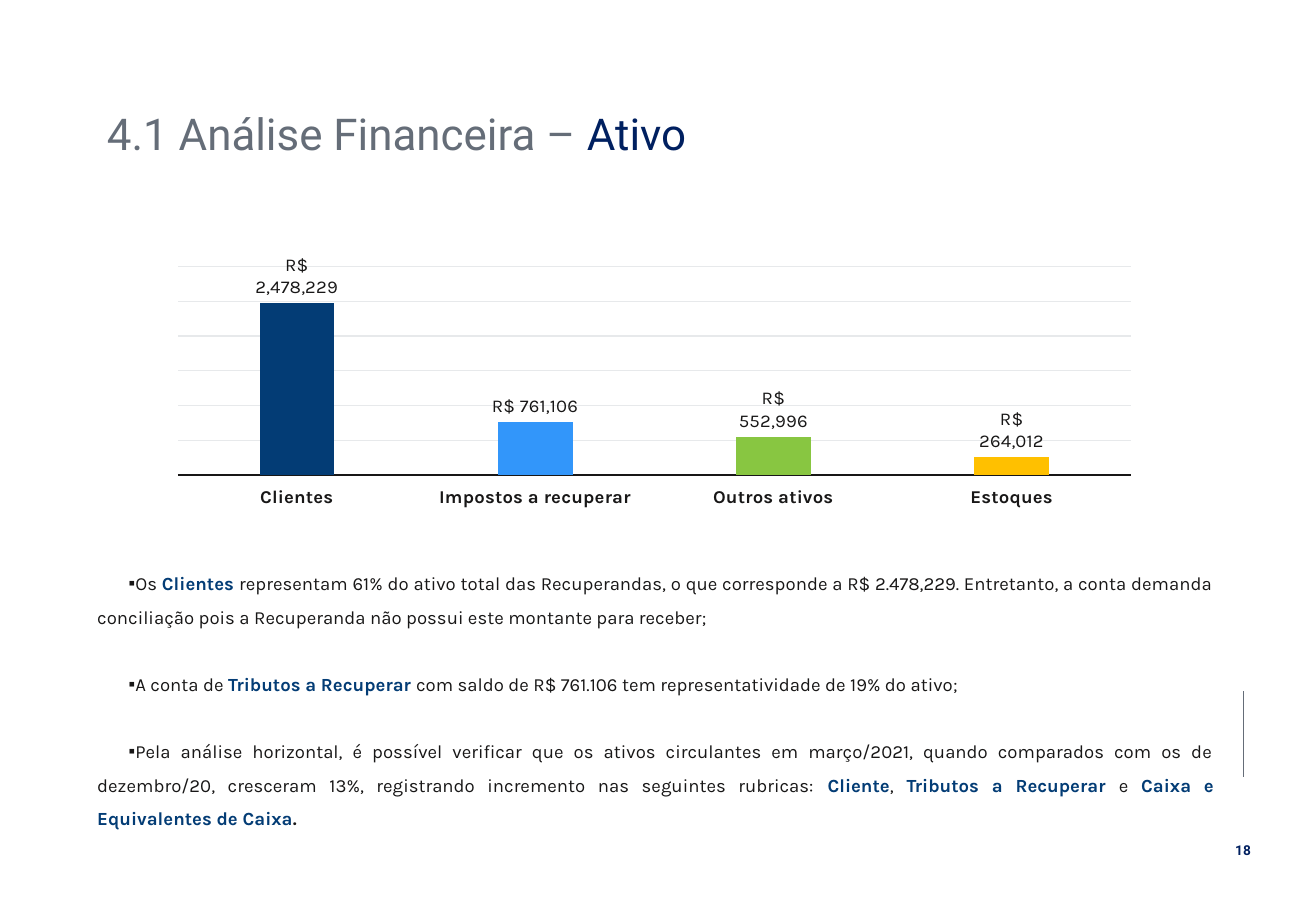
from dataclasses import dataclass

from lxml import etree
from pptx import Presentation
from pptx.chart.data import CategoryChartData
from pptx.dml.color import RGBColor
from pptx.enum.chart import XL_CHART_TYPE as ChartType
from pptx.enum.chart import XL_LABEL_POSITION as LabelPosition
from pptx.enum.chart import XL_TICK_LABEL_POSITION as TickLabels
from pptx.enum.chart import XL_TICK_MARK as TickMark
from pptx.enum.shapes import MSO_CONNECTOR as Connector
from pptx.enum.text import MSO_ANCHOR as Anchor
from pptx.enum.text import MSO_AUTO_SIZE as AutoSize
from pptx.enum.text import PP_ALIGN as Align
from pptx.oxml.ns import qn
from pptx.util import Inches, Pt


@dataclass(frozen=True)
class Theme:
    heading_font: str = "Roboto"
    body_font: str = "Karla"
    gray: str = "656D78"
    navy: str = "002060"
    ink: str = "181717"
    accent: str = "033C75"
    grid: str = "E7E9EB"
    title_size: float = 26
    body_size: float = 11
    page_size: float = 8.1


THEME = Theme()
CURRENCY = '"R$"\\ #,##0'

# category, value, bar colour
ASSETS = [
    ("Clientes", 2478229, "033C75"),
    ("Impostos a recuperar", 761106, "3296FA"),
    ("Outros ativos", 552996, "88C641"),
    ("Estoques", 264012, "FFC000"),
]

# Each finding is a list of (text, is_highlighted) pieces
FINDINGS = [
    [
        ("Os ", False),
        ("Clientes ", True),
        ("representam 61% do ativo total das Recuperandas, o que corresponde a "
         "R$ 2.478,229. Entretanto, a conta demanda conciliação pois a Recuperanda "
         "não possui este montante para receber;", False),
    ],
    [
        ("A conta de ", False),
        ("Tributos a Recuperar ", True),
        ("com saldo de R$ 761.106 tem representatividade de 19% do ativo;", False),
    ],
    [
        ("Pela análise horizontal, é possível verificar que os ativos circulantes em "
         "março/2021, quando comparados com os de dezembro/20, cresceram 13%, "
         "registrando incremento nas seguintes rubricas: ", False),
        ("Cliente", True),
        (",", False),
        (" Tributos a Recuperar ", True),
        ("e", False),
        (" Caixa e Equivalentes de Caixa", True),
        (".", False),
    ],
]


def rgb(color):
    return RGBColor.from_string(color)


def style_font(font, name, size, color=None, bold=False):
    font.name = name
    font.size = Pt(size)
    font.bold = bold
    if color:
        font.color.rgb = rgb(color)


def place(shape, left, top, width, height):
    shape.left, shape.top = Inches(left), Inches(top)
    shape.width, shape.height = Inches(width), Inches(height)


def add_run(paragraph, text, color):
    run = paragraph.add_run()
    run.text = text
    run.font.color.rgb = rgb(color)
    return run


def set_bullet(paragraph, char, first_indent):
    """Give the paragraph a bullet that starts at an indented first line."""
    properties = paragraph._p.get_or_add_pPr()
    properties.set("marL", "0")
    properties.set("indent", str(Inches(first_indent)))
    etree.SubElement(properties, qn("a:buFont")).set("typeface", "Arial")
    etree.SubElement(properties, qn("a:buChar")).set("char", char)


def fill_title(title):
    place(title, 0.78, 0.86, 8.18, 0.53)
    frame = title.text_frame
    frame.auto_size = AutoSize.NONE
    frame.vertical_anchor = Anchor.MIDDLE
    heading = frame.paragraphs[0]
    heading.alignment = Align.LEFT
    heading.line_spacing = 0.9
    style_font(heading.font, THEME.heading_font, THEME.title_size)
    add_run(heading, "4.1 Análise Financeira – ", THEME.gray)
    add_run(heading, "Ativo", THEME.navy)


def fill_findings(body):
    place(body, 0.7, 4.57, 9.39, 2.02)
    frame = body.text_frame
    frame.auto_size = AutoSize.NONE
    for index, pieces in enumerate(FINDINGS):
        finding = frame.add_paragraph() if index else frame.paragraphs[0]
        set_bullet(finding, "▪", 0.26)
        finding.alignment = Align.JUSTIFY
        finding.line_spacing = 1.5
        finding.space_before = Pt(20 if index else 0)
        style_font(finding.font, THEME.body_font, THEME.body_size)
        for text, highlighted in pieces:
            run = add_run(finding, text, THEME.accent if highlighted else THEME.ink)
            run.font.bold = highlighted
    # The closing full stop is bold as well
    run.font.bold = True


def style_axes(chart):
    categories = chart.category_axis
    categories.major_tick_mark = TickMark.NONE
    categories.tick_label_position = TickLabels.LOW
    categories.format.line.color.rgb = rgb(THEME.ink)
    categories.format.line.width = Pt(0.75)
    style_font(categories.tick_labels.font, THEME.body_font, THEME.body_size,
               THEME.ink, bold=True)

    values = chart.value_axis
    values.visible = False
    values.minimum_scale, values.maximum_scale = 0, 3000000
    values.major_unit = 500000
    values.has_major_gridlines = True
    values.major_gridlines.format.line.color.rgb = rgb(THEME.grid)
    values.major_gridlines.format.line.width = Pt(0.75)


def add_asset_chart(slide):
    names, amounts, colors = zip(*ASSETS)
    data = CategoryChartData(number_format=CURRENCY)
    data.categories = names
    data.add_series("Series 1", amounts)
    chart = slide.shapes.add_chart(
        ChartType.COLUMN_CLUSTERED,
        Inches(1.3), Inches(2.09), Inches(8.17), Inches(2.14), data).chart
    chart.has_legend = False
    chart.has_title = False
    style_font(chart.font, THEME.body_font, THEME.body_size, THEME.ink)
    style_axes(chart)

    plot = chart.plots[0]
    plot.gap_width, plot.overlap = 219, -27
    plot.vary_by_categories = False
    bars = plot.series[0]
    for index, color in enumerate(colors):
        fill = bars.points[index].format.fill
        fill.solid()
        fill.fore_color.rgb = rgb(color)

    labels = bars.data_labels
    labels.show_value = True
    labels.position = LabelPosition.OUTSIDE_END
    labels.number_format = CURRENCY
    labels.number_format_is_linked = False
    style_font(labels.font, THEME.body_font, THEME.body_size, THEME.ink)


def add_side_rule(slide):
    rule = slide.shapes.add_connector(
        Connector.STRAIGHT, Inches(10.23), Inches(5.69), Inches(10.23), Inches(6.4))
    rule.line.color.rgb = rgb(THEME.gray)
    rule.line.width = Pt(0.5)
    etree.SubElement(rule._element.spPr, qn("a:effectLst"))


def add_page_number(slide, number):
    box = slide.shapes.add_textbox(
        Inches(10.06), Inches(6.88), Inches(0.34), Inches(0.24))
    box.text_frame.word_wrap = False
    page = box.text_frame.paragraphs[0]
    page.text = number
    page.alignment = Align.CENTER
    style_font(page.font, THEME.heading_font, THEME.page_size, THEME.navy, bold=True)


def main():
    deck = Presentation()
    deck.slide_width, deck.slide_height = Inches(10.83), Inches(7.5)
    slide = deck.slides.add_slide(deck.slide_layouts[1])
    add_side_rule(slide)
    add_page_number(slide, "18")
    fill_title(slide.shapes.title)
    fill_findings(slide.placeholders[1])
    add_asset_chart(slide)
    deck.save("out.pptx")


if __name__ == "__main__":
    main()
